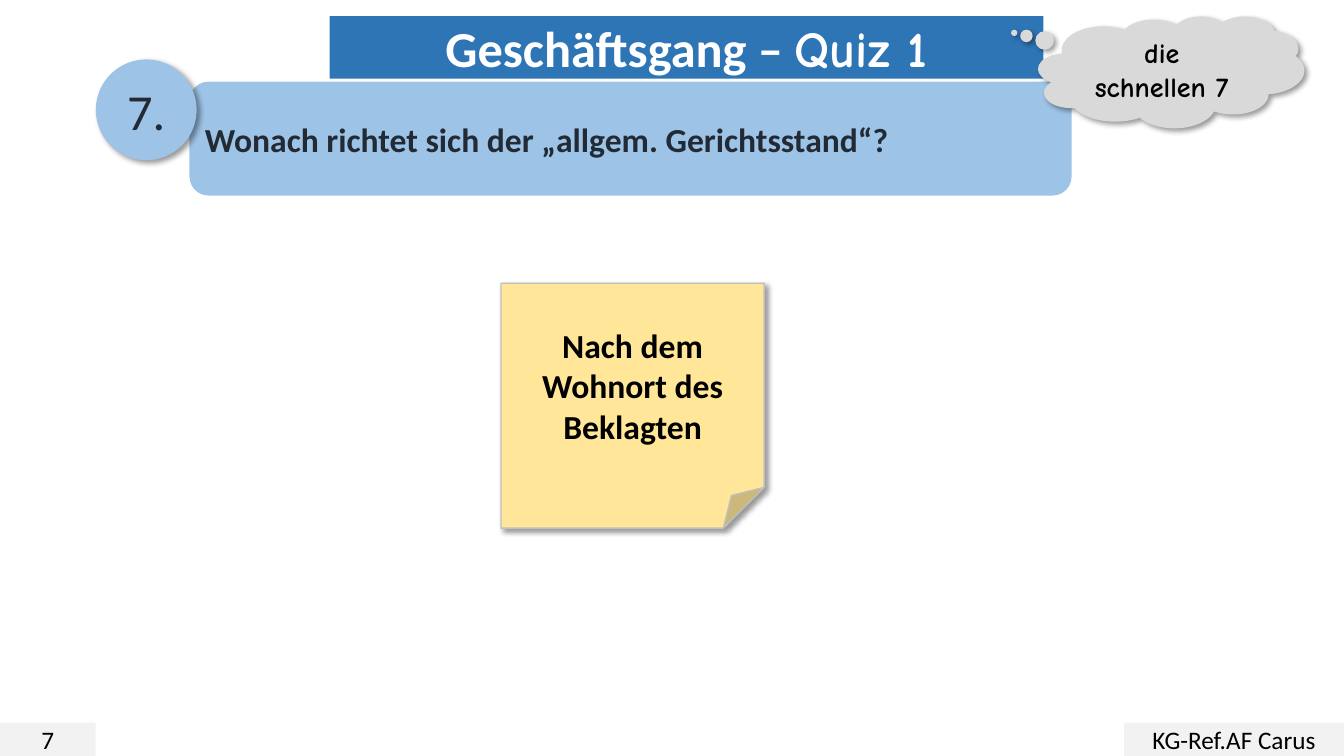
from lxml import etree
from pptx import Presentation
from pptx.dml.color import RGBColor
from pptx.enum.shapes import MSO_SHAPE
from pptx.enum.text import MSO_ANCHOR, MSO_AUTO_SIZE, PP_ALIGN
from pptx.oxml.ns import qn
from pptx.util import Inches, Pt

RECT, ROUND = MSO_SHAPE.RECTANGLE, MSO_SHAPE.ROUNDED_RECTANGLE
OVAL, CLOUD, NOTE = MSO_SHAPE.OVAL, MSO_SHAPE.CLOUD_CALLOUT, MSO_SHAPE.FOLDED_CORNER
LEFT, CENTER = PP_ALIGN.LEFT, PP_ALIGN.CENTER
MIDDLE, NO_FIT = MSO_ANCHOR.MIDDLE, MSO_AUTO_SIZE.NONE
TITLE_ONLY = 5

BODY, COMIC = "Calibri", "Comic Neue"
BLUE, SKY, NAVY = "2E75B6", "9DC3E6", "222A35"
PALE, CLOUD_GREY, EDGE = "F2F2F2", "D9D9D9", "BFBFBF"
YELLOW, BLACK, WHITE = "FFE699", "000000", "FFFFFF"


def rgb(color):
    return RGBColor.from_string(color)


class QuizSlide:
    """Draws on one slide; every box is (left, top, width, height) in percent."""

    def __init__(self, prs):
        self.width, self.height = prs.slide_width, prs.slide_height
        self.s = prs.slides.add_slide(prs.slide_layouts[TITLE_ONLY])

    def place(self, sp, box):
        x, y, w, h = box
        sp.left, sp.width = (int(self.width * v / 100) for v in (x, w))
        sp.top, sp.height = (int(self.height * v / 100) for v in (y, h))

    def paint(self, sp, color):
        sp.fill.solid()
        sp.fill.fore_color.rgb = rgb(color)

    def label(self, sp, runs, size, color, bold=False, align=CENTER):
        """Fills a shape with one paragraph of (text, font) runs."""
        tf = sp.text_frame
        tf.word_wrap, tf.auto_size, tf.vertical_anchor = True, NO_FIT, MIDDLE
        p = tf.paragraphs[0]
        p.alignment = align
        for text, font in runs:
            r = p.add_run()
            r.text = text
            r.font.name, r.font.size, r.font.bold = font, Pt(size), bold
            r.font.color.rgb = rgb(color)

    def title(self, box, runs, size, color, fill):
        sp = self.s.shapes.title
        self.place(sp, box)
        etree.SubElement(sp.element.spPr, qn("a:prstGeom"), prst="roundRect")
        self.paint(sp, fill)
        self.label(sp, runs, size, color, bold=True)

    def shape(self, kind, box, fill, line=None, shadow=False):
        sp = self.s.shapes.add_shape(kind, 0, 0, 0, 0)
        self.place(sp, box)
        self.paint(sp, fill)
        if line:
            sp.line.color.rgb = rgb(line)
            sp.line.width = Pt(1)
        else:
            sp.line.fill.background()
        sp.shadow.inherit = False
        if shadow:
            self.cast_shadow(sp)
        return sp

    def cast_shadow(self, sp):
        effects = sp.element.spPr.find(qn("a:effectLst"))
        outer = etree.SubElement(
            effects, qn("a:outerShdw"), blurRad=str(Pt(4)), dist=str(Pt(3)),
            dir=str(45 * 60000), algn="tl", rotWithShape="0")
        tint = etree.SubElement(outer, qn("a:srgbClr"), val=BLACK)
        etree.SubElement(tint, qn("a:alpha"), val="40000")


def main():
    prs = Presentation()
    prs.slide_width, prs.slide_height = Inches(13.33), Inches(7.5)
    quiz = QuizSlide(prs)

    quiz.title((24.53, 2.13, 53.1, 8.27),
               [("Geschäftsgang – ", BODY), ("Quiz 1", COMIC)], 36, WHITE, BLUE)

    for left, width, text in ((0, 7.13, "7"), (83.63, 16.37, "KG-Ref.AF Carus")):
        footer = quiz.shape(RECT, (left, 95.6, width, 4.4), PALE)
        quiz.label(footer, [(text, BODY)], 18, BLACK)

    question = quiz.shape(ROUND, (14.1, 10.8, 65.63, 15.07), SKY)
    quiz.label(question, [("Wonach richtet sich der „allgem. Gerichtsstand“?", BODY)],
               24, NAVY, bold=True, align=LEFT)

    number = quiz.shape(OVAL, (7.13, 7.87, 7.5, 13.33), SKY, shadow=True)
    quiz.label(number, [("7.", BODY)], 36, NAVY)

    cloud = quiz.shape(CLOUD, (77.25, 2.13, 19.8, 14.8), CLOUD_GREY, shadow=True)
    cloud.adjustments[0], cloud.adjustments[1] = -0.59, -0.35
    quiz.label(cloud, [("die schnellen 7", COMIC)], 20, BLACK, bold=True)

    answer = quiz.shape(NOTE, (37.28, 37.47, 19.58, 32.4), YELLOW, line=EDGE, shadow=True)
    quiz.label(answer, [("Nach dem Wohnort des Beklagten", BODY)], 24, BLACK, bold=True)

    prs.save("out.pptx")


if __name__ == "__main__":
    main()
